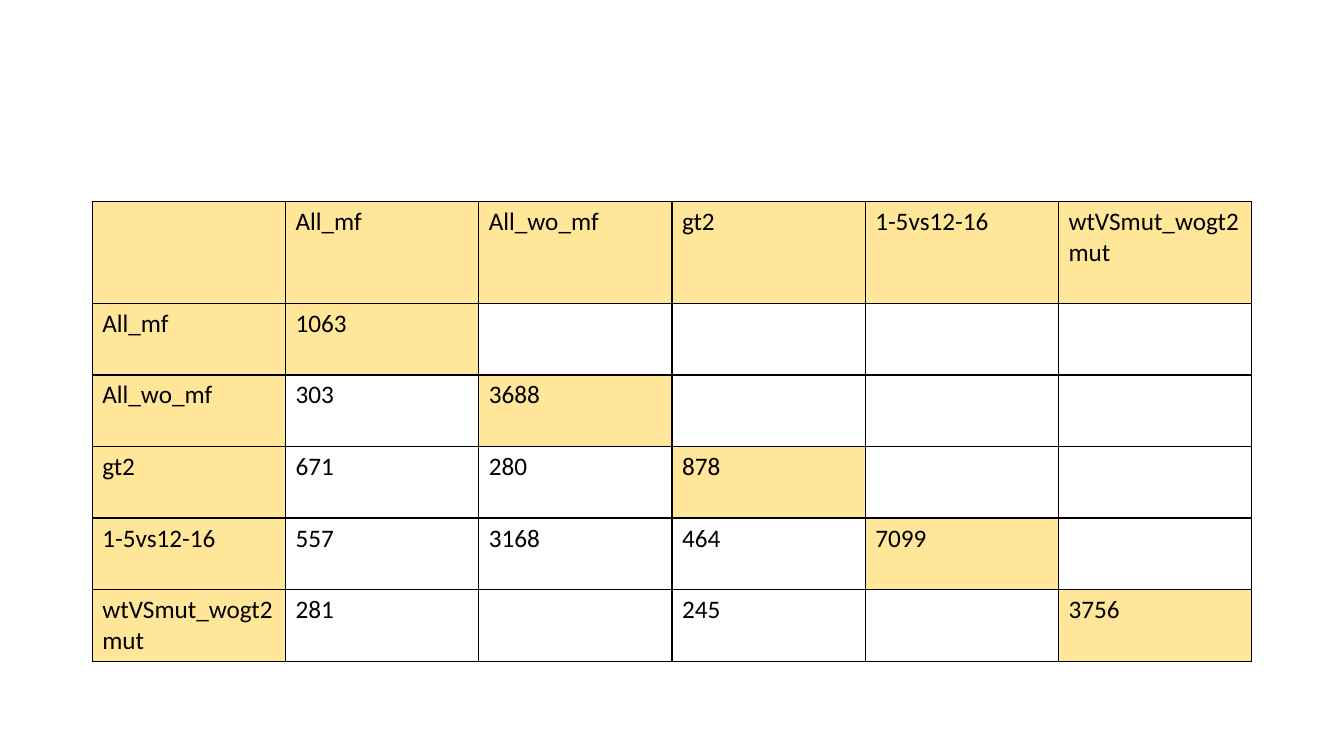
from dataclasses import dataclass

from lxml import etree
from pptx import Presentation
from pptx import util as u
from pptx.dml.color import RGBColor
from pptx.oxml import ns


@dataclass
class Theme:
    gold: str = "FFE699"
    ink: str = "000000"
    face: str = "Calibri"
    size: int = 18
    rule: int = 1


theme = Theme()
names = ["All_mf", "All_wo_mf", "gt2", "1-5vs12-16", "wtVSmut_wogt2mut"]
counts = [
    ["1063"],
    ["303", "3688"],
    ["671", "280", "878"],
    ["557", "3168", "464", "7099"],
    ["281", "", "245", "", "3756"],
]
rows = [["", *names]]
for name, vals in zip(names, counts):
    rows.append([name, *vals, *[""] * (len(names) - len(vals))])
size = len(rows)


def edge(cell, side):
    line = etree.SubElement(cell._tc.get_or_add_tcPr(), ns.qn("a:ln" + side))
    line.set("w", str(u.Pt(theme.rule)))
    fill = etree.SubElement(line, ns.qn("a:solidFill"))
    etree.SubElement(fill, ns.qn("a:srgbClr")).set("val", theme.ink)


deck = Presentation()
deck.slide_width = u.Inches(13.33)
deck.slide_height = u.Inches(7.5)
slide = deck.slides.add_slide(deck.slide_layouts[6])

wide, head, tall = u.Inches(11.5), u.Inches(1.01), u.Inches(0.71)
left = (deck.slide_width - wide) // 2
high = head + (size - 1) * tall
frame = slide.shapes.add_table(size, size, left, u.Inches(2), wide, high)
grid = frame.table
grid.first_row = False
grid.horz_banding = False

for r, row in enumerate(rows):
    grid.rows[r].height = tall if r else head
    for c, label in enumerate(row):
        cell = grid.cell(r, c)
        for side in "LRTB":
            edge(cell, side)
        if r == 0 or c == 0 or r == c:
            cell.fill.solid()
            cell.fill.fore_color.rgb = RGBColor.from_string(theme.gold)
        else:
            cell.fill.background()
        cell.text = label
        font = cell.text_frame.paragraphs[0].font
        font.name = theme.face
        font.size = u.Pt(theme.size)
        font.color.rgb = RGBColor.from_string(theme.ink)

deck.save("out.pptx")
